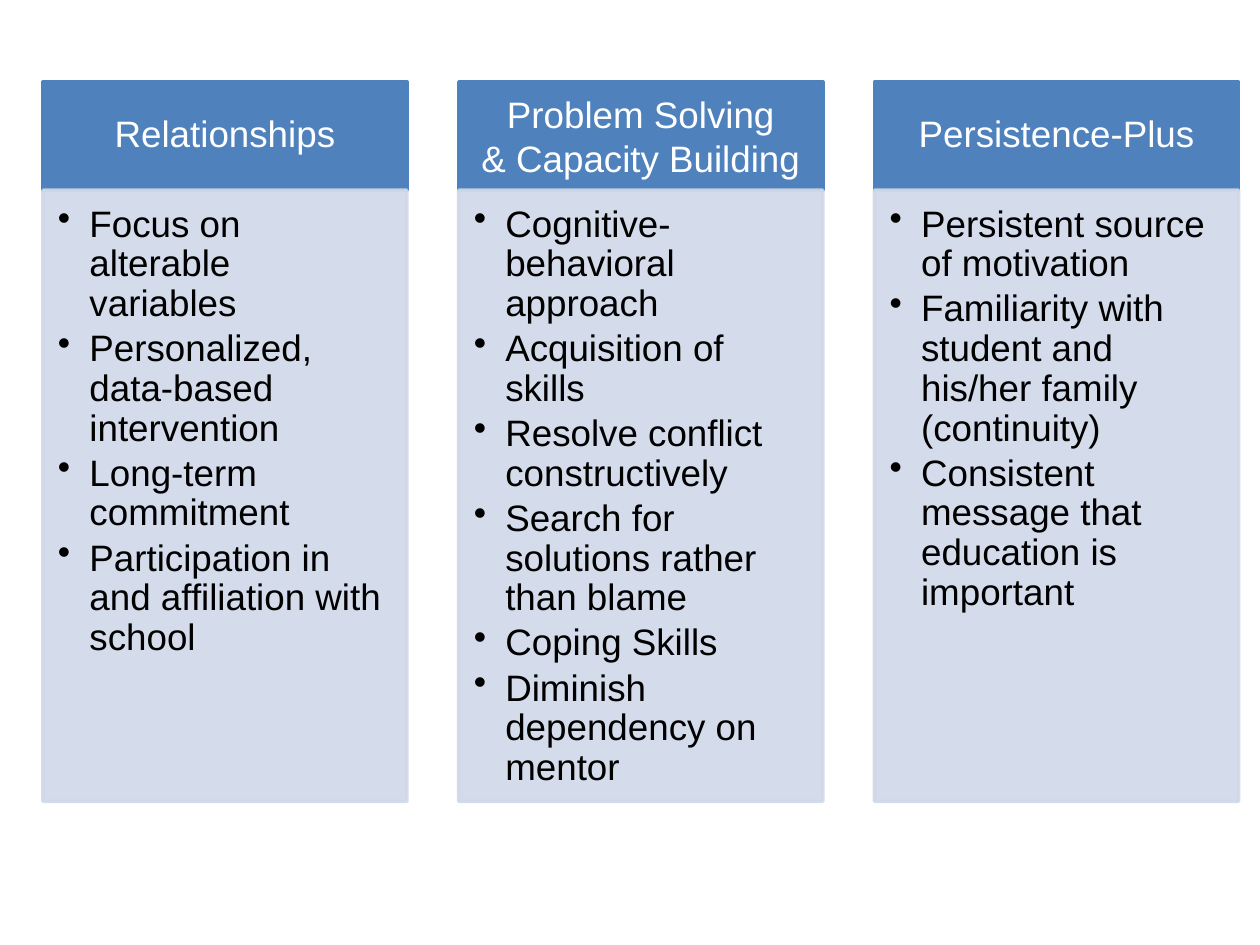
from pptx import Presentation
from pptx.dml.color import RGBColor
from pptx.enum import shapes, text
from pptx.oxml.ns import qn
from pptx.util import Inches, Pt
from lxml import etree

BLUE = RGBColor(0x4F, 0x81, 0xBD)
PALE = RGBColor(0xD0, 0xD8, 0xE8)
WHITE = RGBColor(0xFF, 0xFF, 0xFF)
BLACK = RGBColor(0x00, 0x00, 0x00)

LEFT, TOP, WIDTH, PITCH = 0.34, 0.65, 2.89, 3.3
HEADER_H, BODY_H = 0.86, 4.85

COLUMNS = [
    (["Relationships"],
     ["Focus on alterable variables",
      "Personalized, data-based intervention",
      "Long-term commitment",
      "Participation in and affiliation with school"]),
    (["Problem Solving", "& Capacity Building"],
     ["Cognitive-behavioral approach",
      "Acquisition of skills",
      "Resolve conflict constructively",
      "Search for solutions rather than blame",
      "Coping Skills",
      "Diminish dependency on mentor"]),
    (["Persistence-Plus"],
     ["Persistent source of motivation",
      "Familiarity with student and his/her family (continuity)",
      "Consistent message that education is important"]),
]


def set_all(obj, values):
    for name, value in values.items():
        setattr(obj, name, value)


def add_panel(s, box, color, margins, anchor):
    """Add a filled rectangle and return it, ready for text."""
    sp = s.shapes.add_shape(shapes.MSO_SHAPE.RECTANGLE, *map(Inches, box))
    sp.shadow.inherit = False
    sp.fill.solid()
    sp.fill.fore_color.rgb = color
    sp.line.color.rgb = color
    sp.line.width = Pt(2)
    sides = ("margin_left", "margin_top", "margin_right", "margin_bottom")
    set_all(sp.text_frame, dict(zip(sides, map(Inches, margins)),
                                word_wrap=True, vertical_anchor=anchor))
    return sp


def set_alpha(sp, percent):
    """Make the fill and line of a shape partly transparent."""
    for color in sp._element.spPr.iter(qn("a:srgbClr")):
        etree.SubElement(color, qn("a:alpha")).set("val", str(percent * 1000))


def add_bullet(p):
    pPr = p._p.get_or_add_pPr()
    pPr.set("marL", str(Inches(0.25)))
    pPr.set("indent", str(Inches(-0.25)))
    etree.SubElement(pPr, qn("a:buChar")).set("char", "•")


def write_lines(tf, lines, color, paragraph_format, bulleted=False):
    for i, line in enumerate(lines):
        p = tf.add_paragraph() if i else tf.paragraphs[0]
        if bulleted:
            add_bullet(p)
        set_all(p, paragraph_format)
        r = p.add_run()
        r.text = line
        set_all(r.font, {"name": "Arial", "size": Pt(21)})
        r.font.color.rgb = color


def add_header(s, box, lines):
    sp = add_panel(s, box, BLUE, (0.16, 0.09, 0.16, 0.09),
                   text.MSO_ANCHOR.MIDDLE)
    fmt = {"alignment": text.PP_ALIGN.CENTER}
    if len(lines) == 1:
        fmt.update(line_spacing=0.9, space_after=Pt(7.35))
    write_lines(sp.text_frame, lines, WHITE, fmt)


def add_body(s, box, items):
    sp = add_panel(s, box, PALE, (0.12, 0.12, 0.16, 0.18),
                   text.MSO_ANCHOR.TOP)
    set_alpha(sp, 90)
    fmt = {"alignment": text.PP_ALIGN.LEFT, "level": 1,
           "line_spacing": 0.9, "space_after": Pt(3.15)}
    write_lines(sp.text_frame, items, BLACK, fmt, bulleted=True)


def add_column(s, left, top, width, heading, items):
    add_header(s, (left, top, width, HEADER_H), heading)
    add_body(s, (left, top + HEADER_H, width, BODY_H), items)


def main():
    prs = Presentation()
    prs.slide_width, prs.slide_height = Inches(10), Inches(7.5)
    s = prs.slides.add_slide(prs.slide_layouts[6])
    for i, (heading, items) in enumerate(COLUMNS):
        add_column(s, LEFT + i * PITCH, TOP, WIDTH, heading, items)
    prs.save("out.pptx")


if __name__ == "__main__":
    main()
